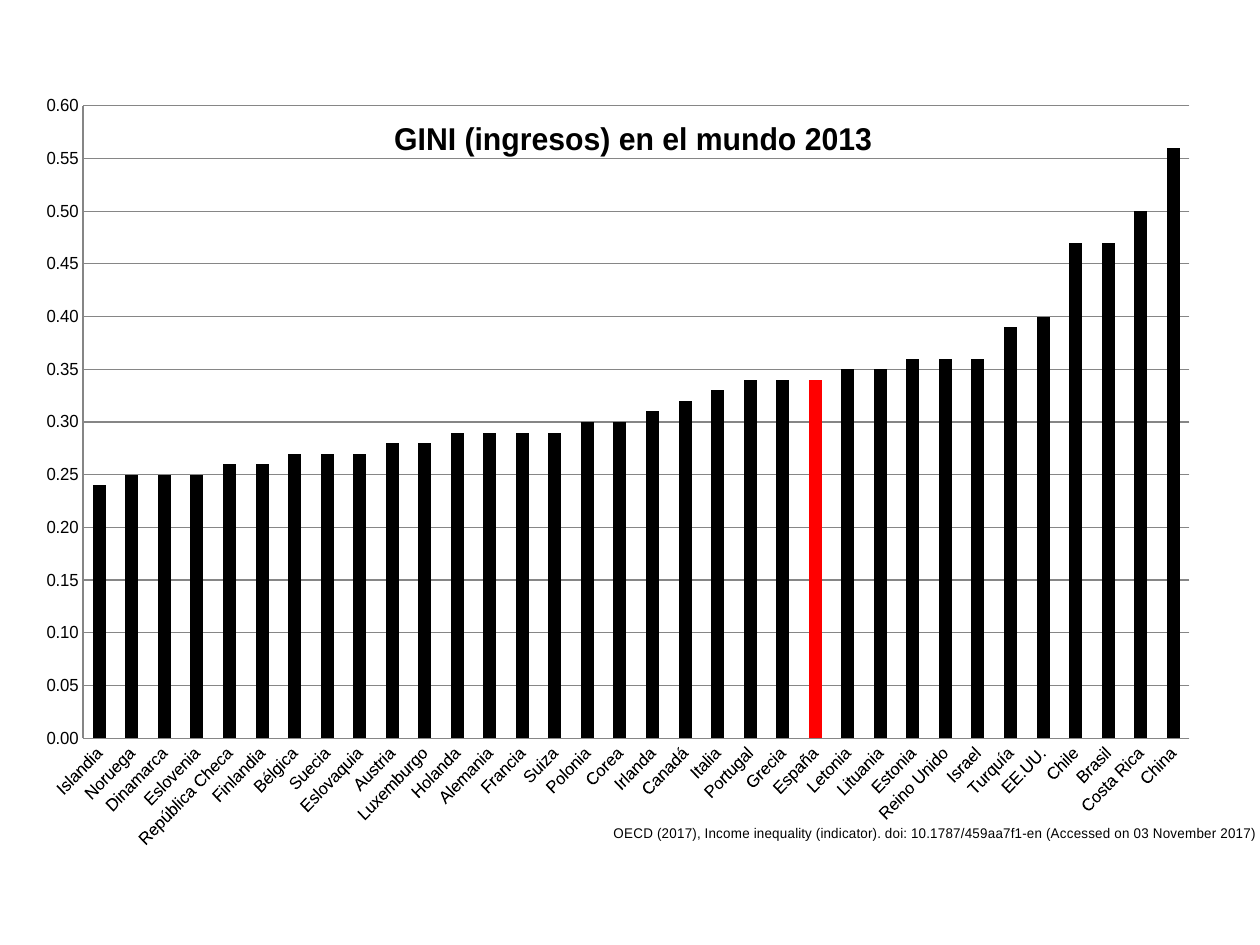
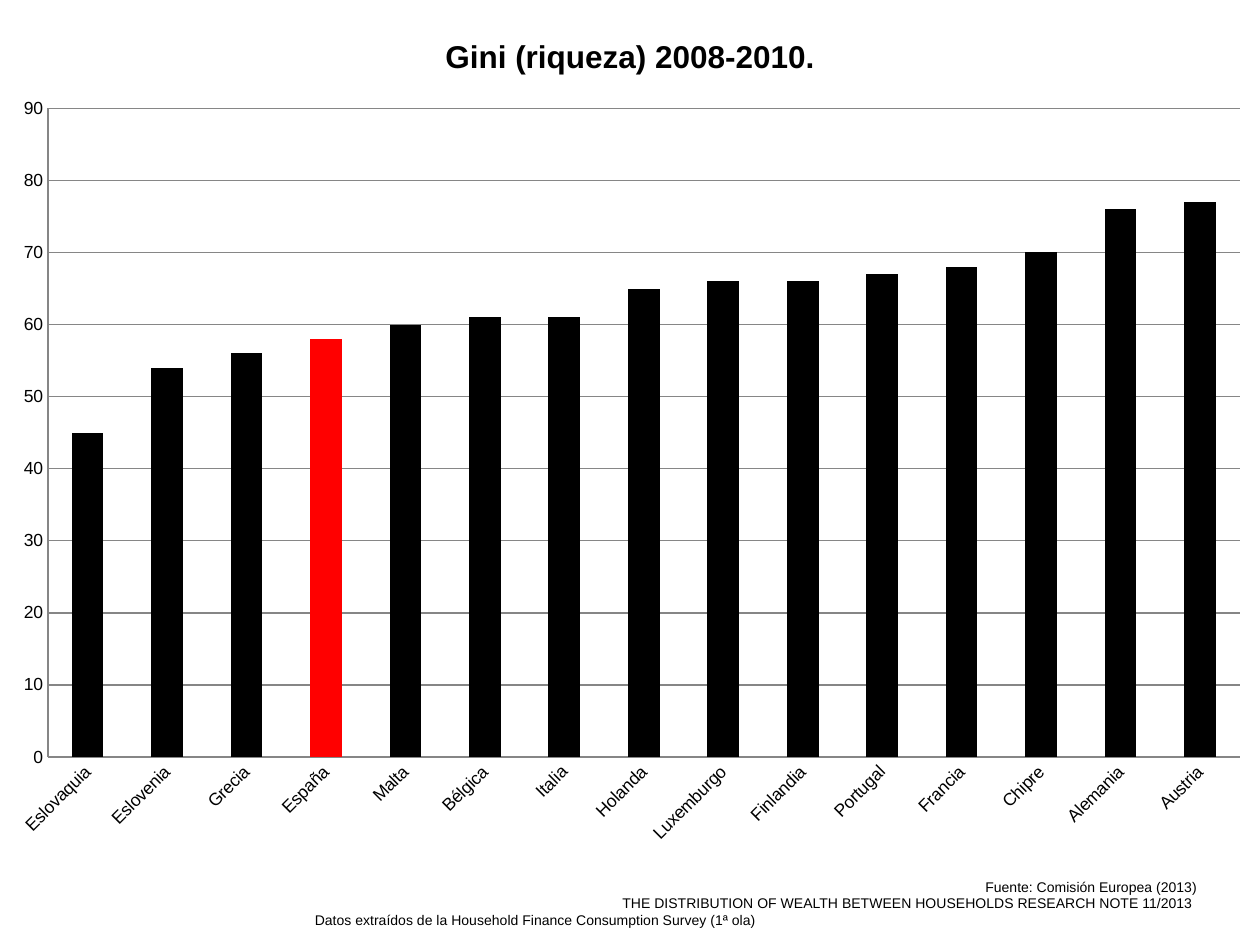
from dataclasses import dataclass
from typing import Optional

from lxml.etree import SubElement
from pptx import Presentation
from pptx.chart.data import CategoryChartData
from pptx.dml.color import RGBColor
from pptx.enum.chart import XL_CHART_TYPE as ChartType, XL_TICK_MARK as TickMark
from pptx.enum.text import PP_ALIGN as Align
from pptx.oxml.ns import qn
from pptx.util import Inches, Pt

FONT = "Arial"
BLACK, RED, GREY = "000000", "FF0000", "868686"
BLANK_LAYOUT = 6
HIGHLIGHT = "España"


@dataclass(frozen=True)
class Area:
    """A rectangle in inches on the slide."""
    left: float
    top: float
    width: float = 0
    height: float = 0

    def lengths(self) -> tuple:
        """Return the four sides as lengths."""
        return tuple(map(Inches, (self.left, self.top, self.width, self.height)))


@dataclass(frozen=True)
class Label:
    """A chart or axis title with its place."""
    text: str
    size: float
    bold: bool
    area: Area


@dataclass(frozen=True)
class GiniChart:
    """A column chart of Gini values by country."""
    area: Area
    plot: Area
    title: Label
    maximum: float
    step: float
    number_format: str
    values: dict
    source: Optional[Label] = None


@dataclass(frozen=True)
class Line:
    """A line of the source note, aligned right unless indented."""
    text: str
    indent: float = 0


INCOME = GiniChart(
    area=Area(-0.04, 0.68, 10.07, 6.14),
    plot=Area(0.69, 0.84, 9.16, 5.02),
    title=Label("GINI (ingresos) en el mundo 2013", 18, True, Area(3.22, 0.89)),
    maximum=0.6,
    step=0.05,
    number_format="#,##0.00",
    values={
        "Islandia": 0.24, "Noruega": 0.25, "Dinamarca": 0.25, "Eslovenia": 0.25,
        "República Checa": 0.26, "Finlandia": 0.26, "Bélgica": 0.27, "Suecia": 0.27,
        "Eslovaquia": 0.27, "Austria": 0.28, "Luxemburgo": 0.28, "Holanda": 0.29,
        "Alemania": 0.29, "Francia": 0.29, "Suiza": 0.29, "Polonia": 0.3,
        "Corea": 0.3, "Irlanda": 0.31, "Canadá": 0.32, "Italia": 0.33,
        "Portugal": 0.34, "Grecia": 0.34, "España": 0.34, "Letonia": 0.35,
        "Lituania": 0.35, "Estonia": 0.36, "Reino Unido": 0.36, "Israel": 0.36,
        "Turquía": 0.39, "EE.UU.": 0.4, "Chile": 0.47, "Brasil": 0.47,
        "Costa Rica": 0.5, "China": 0.56,
    },
    source=Label(
        "OECD (2017), Income inequality (indicator). doi: 10.1787/459aa7f1-en "
        "(Accessed on 03 November 2017) ", 8, False, Area(5.06, 6.52)),
)

WEALTH = GiniChart(
    area=Area(-0.04, 0.07, 10.07, 6.75),
    plot=Area(0.38, 0.86, 9.46, 5.15),
    title=Label("Gini (riqueza) 2008-2010.", 18, True, Area(3.49, 0.24)),
    maximum=90,
    step=10,
    number_format="General",
    values={
        "Eslovaquia": 45, "Eslovenia": 54, "Grecia": 56, "España": 58, "Malta": 60,
        "Bélgica": 61, "Italia": 61, "Holanda": 65, "Luxemburgo": 66, "Finlandia": 66,
        "Portugal": 67, "Francia": 68, "Chipre": 70, "Alemania": 76, "Austria": 77,
    },
)

NOTE_AREA = Area(0.38, 6.92, 9.22, 0.44)
NOTE = (
    Line("Fuente: Comisión Europea (2013)"),
    Line("THE DISTRIBUTION OF WEALTH BETWEEN HOUSEHOLDS RESEARCH NOTE 11/2013 "),
    Line("Datos extraídos de la Household Finance Consumption Survey (1ª ola)", 2.02),
)


def colour(value: str) -> RGBColor:
    """Turn a hex string into a colour."""
    return RGBColor.from_string(value)


def set_values(target, values: dict) -> None:
    """Set each named attribute of the target."""
    for name, value in values.items():
        setattr(target, name, value)


def style_font(font, size: float, bold: bool = False) -> None:
    """Apply the shared typeface and colour."""
    set_values(font, {"name": FONT, "size": Pt(size), "bold": bold})
    font.color.rgb = colour(BLACK)


def style_line(line) -> None:
    """Apply the thin grey line of axes and grid."""
    line.color.rgb = colour(GREY)
    line.width = Pt(0.75)


def paint(part, value: str) -> None:
    """Fill a series or a point with one colour."""
    part.format.fill.solid()
    part.format.fill.fore_color.rgb = colour(value)


def place(parent, index: int, area: Area, frame: Area) -> None:
    """Give a chart part a manual layout inside the chart frame."""
    for old in parent.findall(qn("c:layout")):
        parent.remove(old)
    layout = SubElement(parent, qn("c:layout"))
    parent.insert(index, layout)
    manual = SubElement(layout, qn("c:manualLayout"))
    settings = {"xMode": "edge", "yMode": "edge",
                "x": (area.left - frame.left) / frame.width,
                "y": (area.top - frame.top) / frame.height}
    if area.width:
        settings = {"layoutTarget": "inner", **settings,
                    "w": area.width / frame.width, "h": area.height / frame.height}
    for name, value in settings.items():
        SubElement(manual, qn(f"c:{name}")).set("val", str(value))


def write_label(title, label: Label, frame: Area) -> None:
    """Write and place a chart or axis title."""
    span = title.text_frame.paragraphs[0].add_run()
    span.text = label.text
    style_font(span.font, label.size, label.bold)
    place(title.element, 1, label.area, frame)


def style_axes(chart, gini: GiniChart) -> None:
    """Format both axes and the grid."""
    for axis in (chart.category_axis, chart.value_axis):
        set_values(axis, {"major_tick_mark": TickMark.NONE,
                          "minor_tick_mark": TickMark.NONE})
        style_font(axis.tick_labels.font, 10)
        style_line(axis.format.line)
    set_values(chart.value_axis, {"minimum_scale": 0, "maximum_scale": gini.maximum,
                                  "major_unit": gini.step, "has_major_gridlines": True})
    style_line(chart.value_axis.major_gridlines.format.line)
    set_values(chart.value_axis.tick_labels, {"number_format": gini.number_format,
                                              "number_format_is_linked": False})
    chart.element.xpath(".//c:catAx/c:txPr/a:bodyPr")[0].set("rot", "-2700000")


def add_gini_chart(page, gini: GiniChart) -> None:
    """Draw a column chart with one country highlighted."""
    data = CategoryChartData()
    data.categories = list(gini.values)
    data.add_series("Series 1", list(gini.values.values()))
    chart = page.shapes.add_chart(
        ChartType.COLUMN_CLUSTERED, *gini.area.lengths(), data).chart
    style_font(chart.font, 10)
    set_values(chart, {"has_legend": False, "has_title": True})
    plot = chart.plots[0]
    set_values(plot, {"gap_width": 150, "vary_by_categories": False})
    paint(plot.series[0], BLACK)
    paint(plot.series[0].points[list(gini.values).index(HIGHLIGHT)], RED)
    style_axes(chart, gini)
    write_label(chart.chart_title, gini.title, gini.area)
    if gini.source:
        write_label(chart.category_axis.axis_title, gini.source, gini.area)
    place(chart.element.xpath(".//c:plotArea")[0], 0, gini.plot, gini.area)


def add_note(page, area: Area, lines: tuple[Line, ...]) -> None:
    """Write the source note under the chart."""
    frame = page.shapes.add_textbox(*area.lengths()).text_frame
    frame.word_wrap = True
    for number, line in enumerate(lines):
        para = frame.add_paragraph() if number else frame.paragraphs[0]
        para.alignment = Align.LEFT if line.indent else Align.RIGHT
        if line.indent:
            para._p.get_or_add_pPr().set("marL", str(Inches(line.indent)))
        span = para.add_run()
        span.text = line.text
        style_font(span.font, 8)


def main() -> None:
    """Build and save the deck."""
    deck = Presentation()
    set_values(deck, {"slide_width": Inches(10), "slide_height": Inches(7.5)})
    for gini, note in ((INCOME, ()), (WEALTH, NOTE)):
        page = deck.slides.add_slide(deck.slide_layouts[BLANK_LAYOUT])
        add_gini_chart(page, gini)
        if note:
            add_note(page, NOTE_AREA, note)
    deck.save("out.pptx")


if __name__ == "__main__":
    main()
